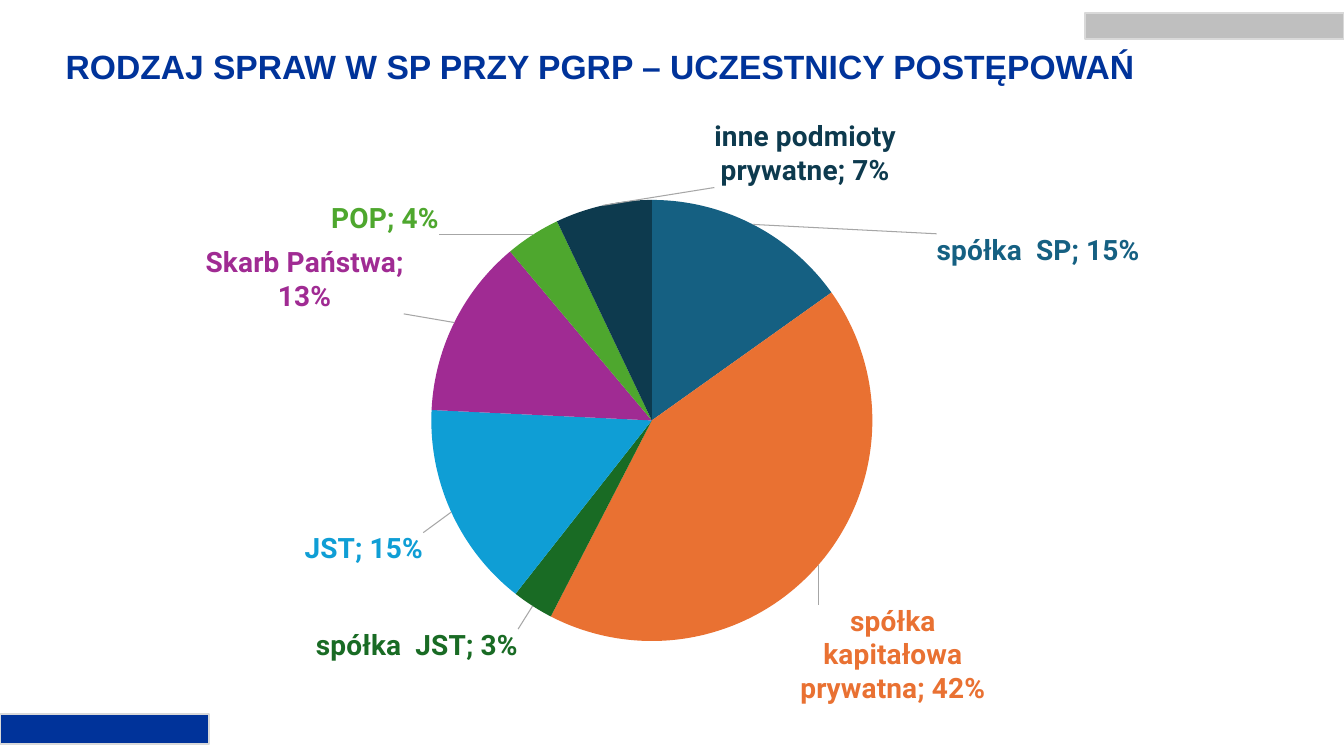
import pptx
import pptx.chart.data
import pptx.dml.color
import pptx.enum.chart
import pptx.enum.shapes
import pptx.enum.text
import pptx.oxml
import pptx.oxml.ns
import pptx.util

Cm, Pt = pptx.util.Cm, pptx.util.Pt
NAVY, GREY, PALE_GREY = "00339A", "BFBFBF", "D9D9D9"

# Category, share, colour, label shift as fractions of the chart
PARTICIPANTS = [
    ("spółka  SP", 0.15, "156082", 0.16, 0.08),
    ("spółka kapitałowa prywatna", 0.42, "E97132", -0.02, 0.06),
    ("spółka  JST", 0.03, "196B24", -0.01, 0.03),
    ("JST", 0.15, "0F9ED5", -0.02, 0.03),
    ("Skarb Państwa", 0.13, "A02B93", -0.04, -0.01),
    ("POP", 0.04, "4EA72E", -0.08, 0.01),
    ("inne podmioty prywatne", 0.07, "0D3A4E", 0.26, -0.02),
]


def colour(hex_code):
    return pptx.dml.color.RGBColor.from_string(hex_code)


def chart_xml(body):
    return pptx.oxml.parse_xml(body.replace(">", f" {pptx.oxml.ns.nsdecls('c', 'a')}>", 1))


def manual_layout(x, y, extra=""):
    return chart_xml(
        f'<c:layout><c:manualLayout>{extra}<c:x val="{x}"/><c:y val="{y}"/>'
        "</c:manualLayout></c:layout>")


class Deck:
    title_font, chart_font = "Arial", "Roboto"

    def __init__(self):
        self.presentation = pptx.Presentation()
        self.presentation.slide_width = Cm(33.87)
        self.presentation.slide_height = Cm(19.05)
        self.slide = self.presentation.slides.add_slide(self.presentation.slide_layouts[5])

    def title(self, wording, left, top, width, height):
        heading = self.slide.shapes.title
        heading.left, heading.top = Cm(left), Cm(top)
        heading.width, heading.height = Cm(width), Cm(height)
        frame = heading.text_frame
        frame.text = wording
        frame.vertical_anchor = pptx.enum.text.MSO_ANCHOR.MIDDLE
        line = frame.paragraphs[0]
        line.alignment = pptx.enum.text.PP_ALIGN.LEFT
        line.line_spacing = 0.9
        font = line.runs[0].font
        font.name, font.size, font.bold = self.title_font, Pt(24), True
        font.color.rgb = colour(NAVY)

    def bar(self, fill, left, top, width, height):
        strip = self.slide.shapes.add_shape(
            pptx.enum.shapes.MSO_SHAPE.RECTANGLE, Cm(left), Cm(top), Cm(width), Cm(height))
        strip.shadow.inherit = False
        strip.fill.solid()
        strip.fill.fore_color.rgb = colour(fill)
        strip.line.color.rgb = colour(PALE_GREY)
        strip.line.width = Pt(1.5)

    def style_font(self, font, size, hex_code, bold):
        font.name, font.size, font.bold = self.chart_font, Pt(size), bold
        font.color.rgb = colour(hex_code)

    def pie(self, participants, left, top, width, height):
        shares = pptx.chart.data.CategoryChartData(number_format="0%")
        shares.categories = [row[0] for row in participants]
        shares.add_series("Series 1", [row[1] for row in participants])
        chart = self.slide.shapes.add_chart(
            pptx.enum.chart.XL_CHART_TYPE.PIE,
            Cm(left), Cm(top), Cm(width), Cm(height), shares).chart
        chart.has_title = chart.has_legend = False
        self.style_font(chart.font, 10, "000000", False)
        plot = chart.plots[0]
        plot.vary_by_categories = True

        # Plot area
        area = chart._chartSpace.chart.plotArea
        for old in area.findall(pptx.oxml.ns.qn("c:layout")):
            area.remove(old)
        frame = manual_layout(
            0.32, 0.14,
            '<c:layoutTarget val="inner"/><c:xMode val="edge"/><c:yMode val="edge"/>')
        frame[0].append(chart_xml('<c:w val="0.39"></c:w>'))
        frame[0].append(chart_xml('<c:h val="0.74"></c:h>'))
        area.insert(0, frame)

        # Slices and their labels
        series = plot.series[0]
        labels = series.data_labels
        labels.show_value = labels.show_category_name = True
        labels.number_format, labels.number_format_is_linked = "0%", False
        labels.position = pptx.enum.chart.XL_LABEL_POSITION.OUTSIDE_END
        self.style_font(labels.font, 20, participants[0][2], True)
        for index, (_, _, hex_code, dx, dy) in enumerate(participants):
            point = series.points[index]
            point.format.fill.solid()
            point.format.fill.fore_color.rgb = colour(hex_code)
            point.format.line.fill.background()
            self.style_font(point.data_label.font, 20, hex_code, True)
            point.data_label.position = pptx.enum.chart.XL_LABEL_POSITION.OUTSIDE_END
            self.shift_label(labels._element.xpath(f"c:dLbl[c:idx/@val='{index}']")[0], dx, dy)
        self.leader_lines(labels._element)

    def shift_label(self, label, dx, dy):
        label.insert(1, manual_layout(dx, dy))
        label.insert(2, chart_xml('<c:numFmt formatCode="0%" sourceLinked="0"></c:numFmt>'))
        label.xpath("c:showCatName")[0].set("val", "1")
        label.append(chart_xml("<c:separator>; </c:separator>"))

    def leader_lines(self, labels):
        for old in labels.xpath("c:showLeaderLines | c:separator"):
            labels.remove(old)
        labels.append(chart_xml("<c:separator>; </c:separator>"))
        labels.append(chart_xml('<c:showLeaderLines val="1"></c:showLeaderLines>'))
        labels.append(chart_xml(
            '<c:leaderLines><c:spPr><a:ln w="9525"><a:solidFill><a:srgbClr val="A6A6A6"/>'
            "</a:solidFill></a:ln></c:spPr></c:leaderLines>"))


def main():
    deck = Deck()
    # Heading and corner bars
    deck.title("RODZAJ SPRAW W SP PRZY PGRP – UCZESTNICY POSTĘPOWAŃ", 1.4, 0.99, 29.21, 1.5)
    deck.bar(GREY, 27.35, 0.33, 6.52, 0.66)
    deck.bar(NAVY, 0, 18, 5.26, 0.74)
    # Shares of participants
    deck.pie(PARTICIPANTS, 1.75, 2.84, 28.5, 15.21)
    deck.presentation.save("out.pptx")


if __name__ == "__main__":
    main()
